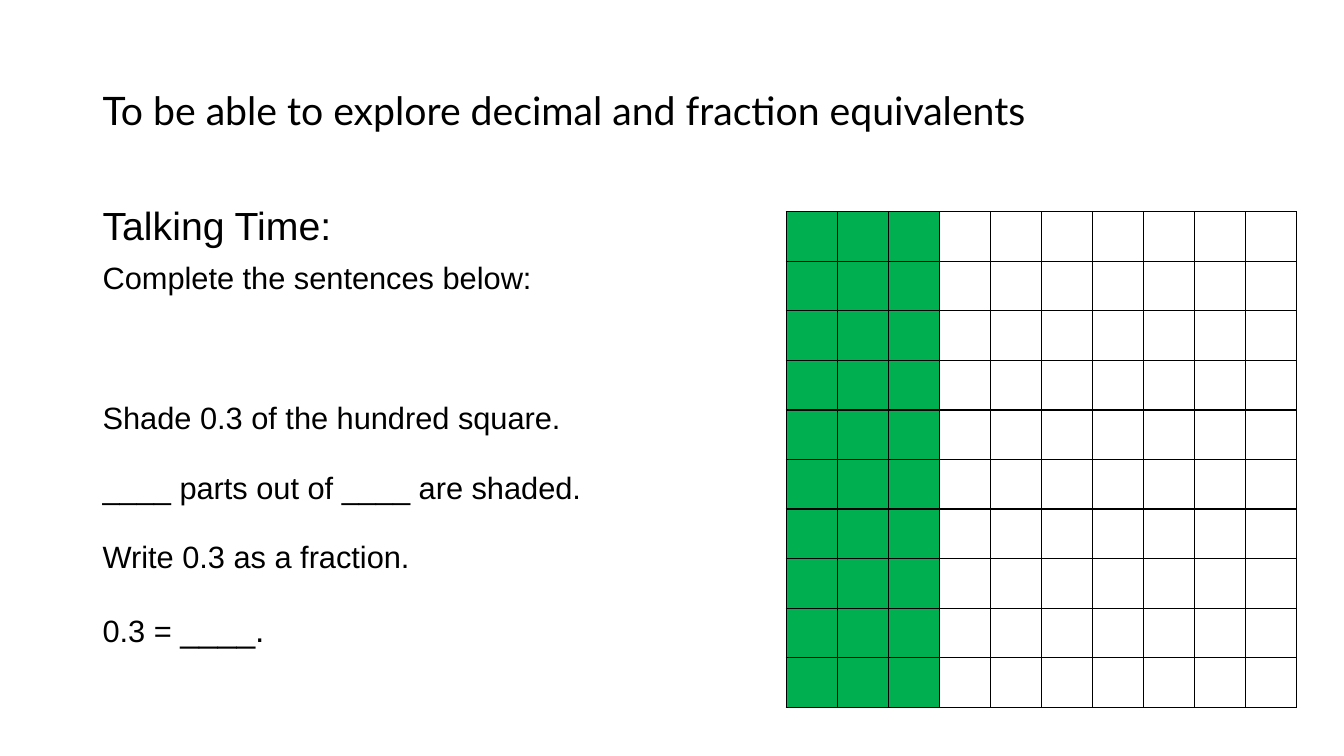
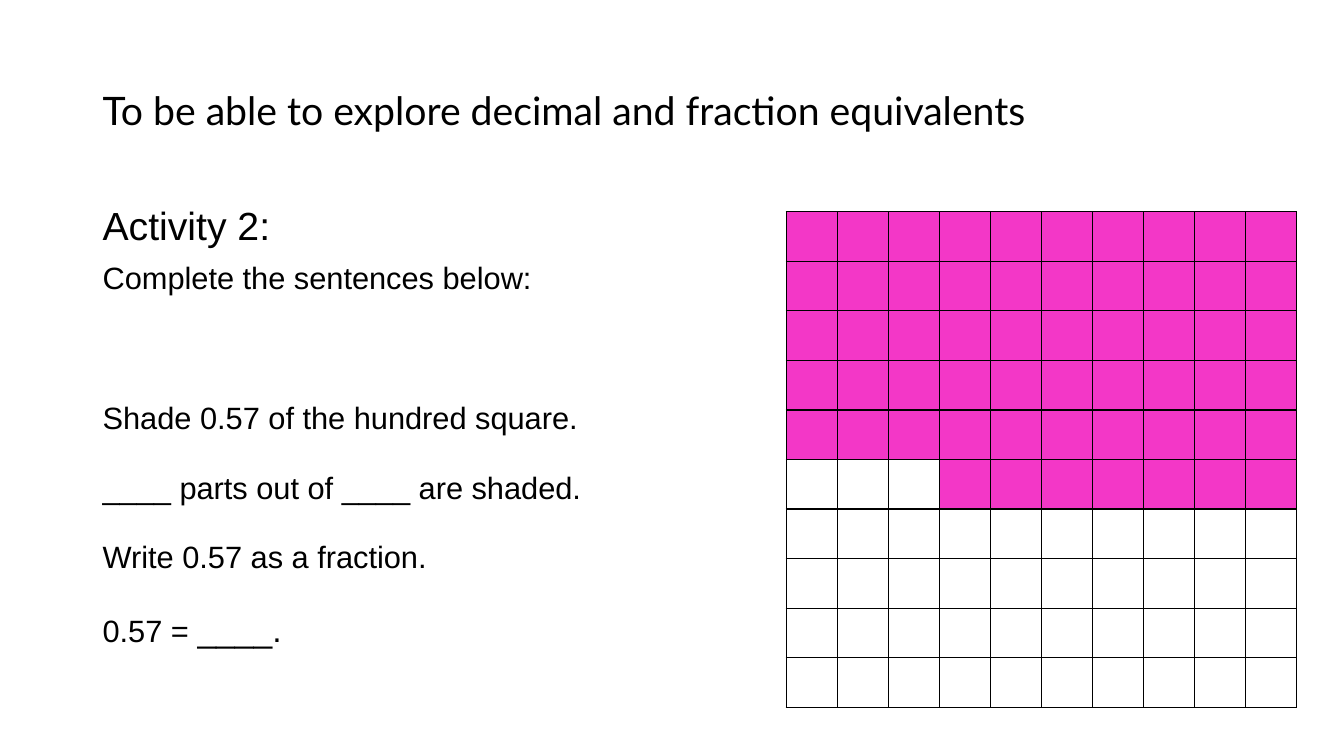
from lxml import etree
from pptx import Presentation
from pptx import util as u
from pptx.dml.color import RGBColor
from pptx.enum import text
from pptx.oxml.ns import qn

WIDTH, HEIGHT = u.Inches(13.33), u.Inches(7.5)
COLOURS = {"ink": "000000", "blank": "FFFFFF", "green": "00B050", "pink": "F337C7"}
TITLE = "To be able to explore decimal and fraction equivalents"
TITLE_FONT, BODY_FONT = "Lato", "Arial"
GRID = 10

# Left, top, width and height as shares of the slide
TITLE_BOX = (0.069, 0.053, 0.72, 0.193)
SENTENCES_BOX = (0.069, 0.267, 0.5, 0.699)
SQUARE_BOX = (0.585, 0.28, 0.38, 0.656)


def place(box):
    left, top, width, height = box
    return (round(left * WIDTH), round(top * HEIGHT),
            round(width * WIDTH), round(height * HEIGHT))


def colour(name):
    return RGBColor.from_string(COLOURS[name])


def add_frame(page, box, anchor):
    frame = page.shapes.add_textbox(*place(box)).text_frame
    frame.word_wrap = True
    frame.vertical_anchor = anchor
    return frame


def add_span(para, words, size, font):
    span = para.add_run()
    span.text = words
    span.font.size = u.Pt(size)
    span.font.name = font
    span.font.color.rgb = colour("ink")


def add_title(page, box):
    para = add_frame(page, box, text.MSO_ANCHOR.MIDDLE).paragraphs[0]
    para.line_spacing = 0.9
    add_span(para, TITLE, 28, TITLE_FONT)


def add_sentences(page, box, heading, decimal):
    # Each line: spans of (words, size), line spacing, space before
    lines = [
        ([(heading, 28)], 0.9, 0),
        ([("Complete the sentences below:", 22)], 0.9, 10),
        ([(f"Shade {decimal} of the hundred square.", 22)], 1.5, 60),
        ([("____ parts out of ____ are shaded.", 22)], 1.5, 10),
        ([(f"Write {decimal} as a fraction.", 22)], 1.5, 10),
        ([(f"{decimal} = ", 22), ("____.", 24)], 1.5, 10),
    ]
    frame = add_frame(page, box, text.MSO_ANCHOR.TOP)
    for index, (spans, spacing, before) in enumerate(lines):
        para = frame.add_paragraph() if index else frame.paragraphs[0]
        para.line_spacing = spacing
        para.space_before = u.Pt(before)
        for words, size in spans:
            add_span(para, words, size, BODY_FONT)


def add_borders(cell):
    properties = cell._tc.get_or_add_tcPr()
    for side in ("a:lnL", "a:lnR", "a:lnT", "a:lnB"):
        line = etree.SubElement(properties, qn(side), w=str(u.Pt(1)))
        fill = etree.SubElement(line, qn("a:solidFill"))
        etree.SubElement(fill, qn("a:srgbClr"), val=COLOURS["ink"])


def add_hundred_square(page, box, shade, is_shaded):
    table = page.shapes.add_table(GRID, GRID, *place(box)).table
    table.first_row = table.horz_banding = False
    for row in range(GRID):
        for column in range(GRID):
            cell = table.cell(row, column)
            add_borders(cell)
            cell.fill.solid()
            cell.fill.fore_color.rgb = colour(shade if is_shaded(row, column) else "blank")


def add_activity(deck, heading, decimal, shade, is_shaded):
    page = deck.slides.add_slide(deck.slide_layouts[6])
    add_title(page, TITLE_BOX)
    add_sentences(page, SENTENCES_BOX, heading, decimal)
    add_hundred_square(page, SQUARE_BOX, shade, is_shaded)


def main():
    deck = Presentation()
    deck.slide_width, deck.slide_height = WIDTH, HEIGHT
    add_activity(deck, "Talking Time:", "0.3", "green",
                 lambda row, column: column < 3)
    add_activity(deck, "Activity 2:", "0.57", "pink",
                 lambda row, column: row < 5 or (row == 5 and column >= 3))
    deck.save("out.pptx")


if __name__ == "__main__":
    main()
